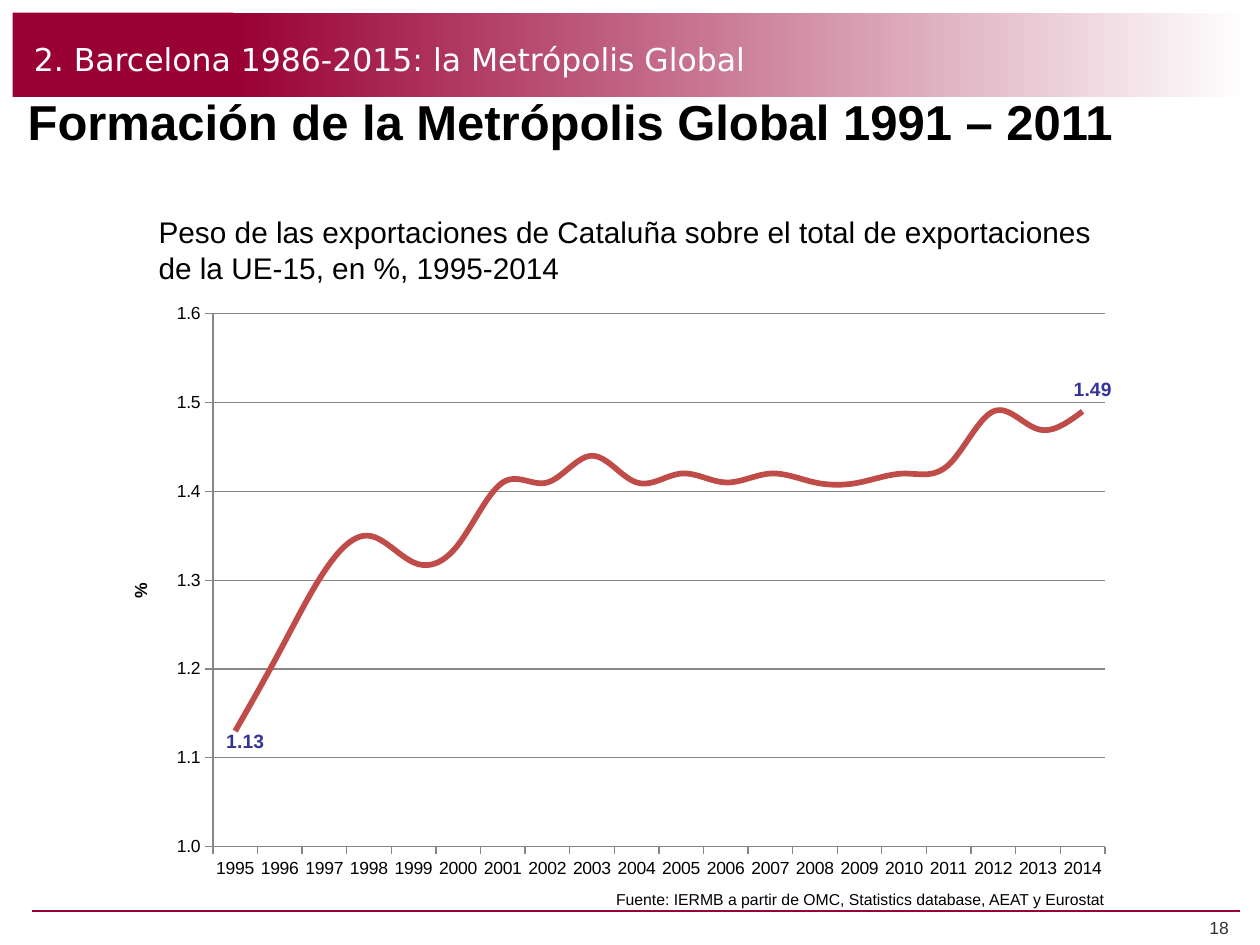
from lxml import etree
from pptx import Presentation
from pptx.chart.data import CategoryChartData
from pptx.dml.color import RGBColor
from pptx.enum import chart as charts, shapes, text
from pptx.oxml.ns import qn
from pptx.util import Inches, Pt

CRIMSON = "990033"
GREY = "868686"
EXPORT_SHARES = [1.13, 1.22, 1.31, 1.35, 1.32, 1.34, 1.41, 1.41, 1.44, 1.41,
                 1.42, 1.41, 1.42, 1.41, 1.41, 1.42, 1.43, 1.49, 1.47, 1.49]


def color(value):
    return RGBColor.from_string(value)


def style_font(font, size, fill="000000", bold=False, name="Arial"):
    font.name = name
    font.size = Pt(size)
    font.bold = bold
    font.color.rgb = color(fill)


def write_text(shape, content, size, align=text.PP_ALIGN.LEFT, wrap=True,
               side_margin=0.1, **font_format):
    frame = shape.text_frame
    frame.word_wrap = wrap
    frame.margin_left = frame.margin_right = Inches(side_margin)
    frame.vertical_anchor = text.MSO_ANCHOR.TOP
    paragraph = frame.paragraphs[0]
    paragraph.alignment = align
    run = paragraph.add_run()
    run.text = content
    style_font(run.font, size, **font_format)


def add_text(slide, box, content, size, **text_format):
    shape = slide.shapes.add_textbox(*map(Inches, box))
    write_text(shape, content, size, **text_format)


def set_title(slide, box, content, size, **text_format):
    title = slide.shapes.title
    title.left, title.top, title.width, title.height = map(Inches, box)
    write_text(title, content, size, **text_format)


def add_band(slide, box, start, end=None):
    """Add a rectangle, filled left to right with a gradient if end is given."""
    band = slide.shapes.add_shape(shapes.MSO_SHAPE.RECTANGLE, *map(Inches, box))
    band.shadow.inherit = False
    band.line.fill.background()
    if end is None:
        band.fill.solid()
        band.fill.fore_color.rgb = color(start)
        return
    band.fill.gradient()
    band.fill.gradient_angle = 0
    for stop, value, position in zip(band.fill.gradient_stops, (start, end), (0, 1)):
        stop.color.rgb = color(value)
        stop.position = position


def add_rule(slide, left, right, y):
    rule = slide.shapes.add_connector(
        shapes.MSO_CONNECTOR.STRAIGHT, Inches(left), Inches(y), Inches(right), Inches(y))
    rule.line.color.rgb = color(CRIMSON)
    rule.line.width = Pt(1)
    etree.SubElement(rule._element.spPr, qn("a:effectLst"))


def set_layout(element, index, **settings):
    """Give a chart element a manual layout as its child at index."""
    for layout in element.findall(qn("c:layout")):
        element.remove(layout)
    layout = etree.Element(qn("c:layout"))
    manual = etree.SubElement(layout, qn("c:manualLayout"))
    for tag, value in settings.items():
        etree.SubElement(manual, qn("c:" + tag)).set("val", str(value))
    element.insert(index, layout)


def place_plot(chart, chart_box, plot_box):
    """Place the inner plot area; both boxes are in slide inches."""
    left, top, width, height = chart_box
    plot_left, plot_top, plot_width, plot_height = plot_box
    plot_area = chart._chartSpace.find(".//" + qn("c:plotArea"))
    set_layout(plot_area, 0, layoutTarget="inner", xMode="edge", yMode="edge",
               x=(plot_left - left) / width, y=(plot_top - top) / height,
               w=plot_width / width, h=plot_height / height)


def style_axis(axis):
    axis.major_tick_mark = charts.XL_TICK_MARK.OUTSIDE
    axis.minor_tick_mark = charts.XL_TICK_MARK.NONE
    axis.format.line.color.rgb = color(GREY)
    axis.format.line.width = Pt(0.75)
    style_font(axis.tick_labels.font, 10)


def label_point(series, index, position, shift_x, shift_y):
    """Label one point, shifted by fractions of the chart's size."""
    label = series.points[index].data_label
    style_font(label.font, 11, fill="333399", bold=True)
    label.position = position
    for element in series._element.iter(qn("c:dLbl")):
        if element.find(qn("c:idx")).get("val") == str(index):
            set_layout(element, 1, x=shift_x, y=shift_y)


def add_export_chart(slide, box, plot_box):
    data = CategoryChartData(number_format="0.00")
    data.categories = [str(year) for year in range(1995, 2015)]
    data.add_series("Series 1", EXPORT_SHARES)
    chart = slide.shapes.add_chart(
        charts.XL_CHART_TYPE.LINE, *map(Inches, box), data).chart
    chart.has_legend = False
    chart.has_title = False
    style_font(chart.font, 10)
    place_plot(chart, box, plot_box)

    style_axis(chart.category_axis)
    values = chart.value_axis
    style_axis(values)
    values.minimum_scale, values.maximum_scale, values.major_unit = 1, 1.6, 0.1
    values.tick_labels.number_format = "#,##0.0"
    values.tick_labels.number_format_is_linked = False
    values.has_major_gridlines = True
    values.major_gridlines.format.line.color.rgb = color(GREY)
    values.major_gridlines.format.line.width = Pt(0.75)
    run = values.axis_title.text_frame.paragraphs[0].add_run()
    run.text = "%"
    style_font(run.font, 10, bold=True)

    chart.plots[0].vary_by_categories = False
    series = chart.plots[0].series[0]
    series.smooth = True
    series.marker.style = charts.XL_MARKER_STYLE.NONE
    series.format.line.color.rgb = color("BF4C48")
    series.format.line.width = Pt(3.25)
    label_point(series, 0, charts.XL_LABEL_POSITION.BELOW, 0.01, -0.01)
    label_point(series, len(EXPORT_SHARES) - 1, charts.XL_LABEL_POSITION.ABOVE, 0.01, -0.01)


def main():
    presentation = Presentation()
    presentation.slide_width = Inches(10)
    presentation.slide_height = Inches(7.5)
    slide = presentation.slides.add_slide(presentation.slide_layouts[5])

    add_band(slide, (1.83, 0.1, 8.07, 0.67), CRIMSON, "FFFFFF")
    add_rule(slide, 0.25, 9.84, 7.23)
    add_band(slide, (0.1, 0.1, 1.75, 0.67), CRIMSON)
    add_text(slide, (9.5, 7.23, 0.35, 0.27), "18", 10, align=text.PP_ALIGN.CENTER,
             wrap=False, side_margin=0.02, fill="333333")
    add_text(slide, (0.17, 0.27, 7.92, 0.4), "2. Barcelona 1986-2015: la Metrópolis Global",
             18, fill="FFFFFF", name="DejaVu Sans")
    set_title(slide, (0.12, 0.68, 9.3, 0.57),
              "Formación de la Metrópolis Global 1991 – 2011", 28, bold=True)
    add_text(slide, (1.16, 1.65, 7.85, 0.67),
             "Peso de las exportaciones de Cataluña sobre el total de exportaciones "
             "de la UE-15, en %, 1995-2014", 17)
    add_text(slide, (3.43, 7.01, 5.43, 0.25),
             "Fuente: IERMB a partir de OMC, Statistics database, AEAT y Eurostat",
             9, align=text.PP_ALIGN.RIGHT)
    add_export_chart(slide, (0.83, 2.32, 8.11, 4.76), (1.69, 2.49, 7.08, 4.23))
    presentation.save("out.pptx")


if __name__ == "__main__":
    main()
